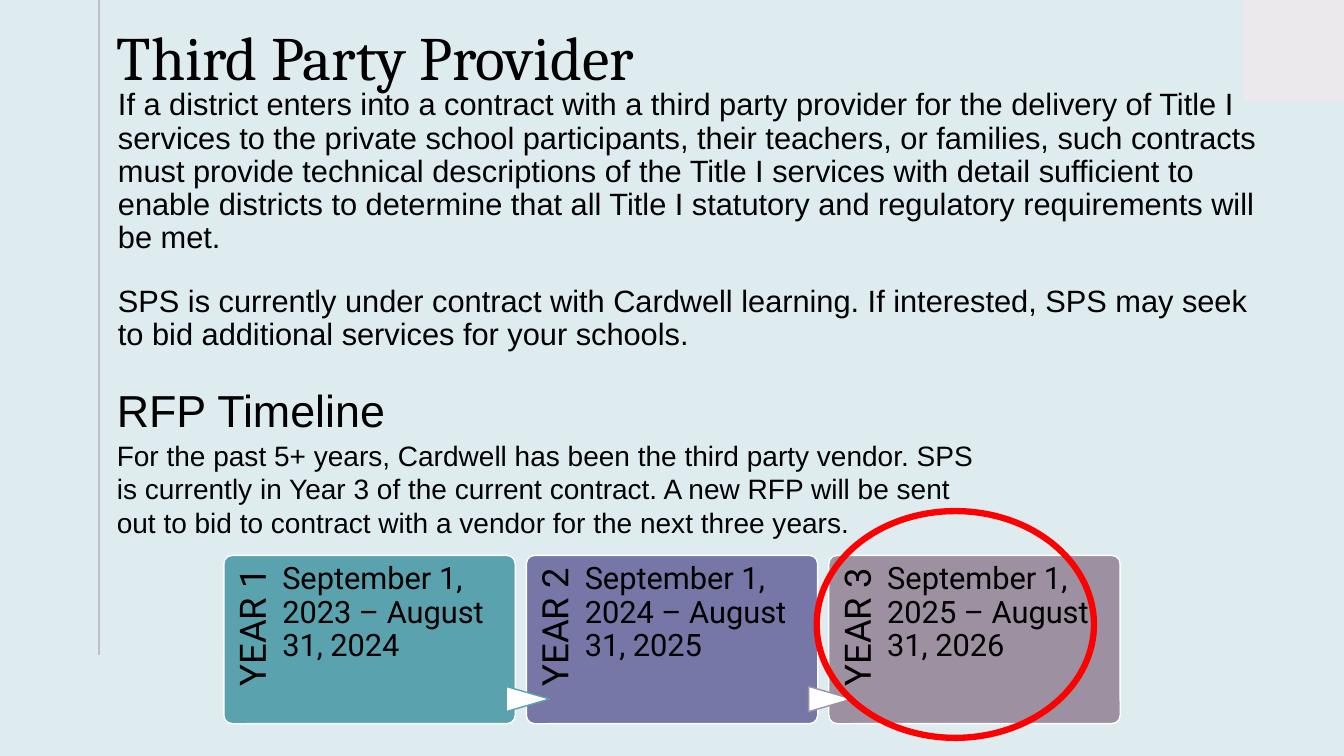
from dataclasses import dataclass

from pptx import Presentation
from pptx import util as u
from pptx.dml.color import RGBColor
from pptx.enum import shapes, text
from pptx.oxml.ns import qn
from lxml import etree

PX = 9144  # EMU in one px, 100 px to the inch
COLORS = {
    "paper": "DEECEF", "corner": "EBE9EC", "rule": "C4BCC6", "ink": "000000",
    "white": "FFFFFF", "teal": "5AA2AE", "violet": "7677A6", "mauve": "9D90A0",
    "red": "FF0000",
}
SHAPE = shapes.MSO_SHAPE
INSET = (10, 5, 10, 5)
FLUSH = (0, 5, 10, 5)
YEAR_PITCH = 300


@dataclass(frozen=True)
class Box:
    left: int
    top: int
    width: int
    height: int

    def emu(self) -> list[int]:
        return [n * PX for n in (self.left, self.top, self.width, self.height)]

    def moved(self, steps: int) -> "Box":
        return Box(self.left + steps * YEAR_PITCH, self.top, self.width, self.height)


@dataclass(frozen=True)
class Year:
    label: str
    dates: str
    fill: str
    arrow_line: str | None = None


CARD = Box(222, 551, 289, 167)
LABEL = Box(183, 590, 137, 58)
DATES = Box(280, 551, 216, 167)
ARROW = Box(211, 672, 25, 43)
YEARS = [
    Year("YEAR 1", "September 1, 2023 – August 31, 2024", "teal"),
    Year("YEAR 2", "September 1, 2024 – August 31, 2025", "violet", "teal"),
    Year("YEAR 3", "September 1, 2025 – August 31, 2026", "mauve", "mauve"),
]


def color(name: str) -> RGBColor:
    return RGBColor.from_string(COLORS[name])


def write(para, words: str, *, size: int, font: str = "Arial", spacing: float = 0.9,
          before: int = 0, align=text.PP_ALIGN.LEFT) -> None:
    para.alignment = align
    para.line_spacing = spacing
    para.space_before = u.Pt(before)
    span = para.add_run()
    span.text = words
    span.font.size = u.Pt(size)
    span.font.name = font
    span.font.color.rgb = color("ink")


def set_frame(frame, insets: tuple[int, ...] = INSET, anchor=text.MSO_ANCHOR.TOP) -> None:
    frame.word_wrap = True
    frame.auto_size = text.MSO_AUTO_SIZE.NONE
    frame.vertical_anchor = anchor
    (frame.margin_left, frame.margin_top,
     frame.margin_right, frame.margin_bottom) = [n * PX for n in insets]


def add_text(page, box: Box, words: str, *, insets: tuple[int, ...] = INSET,
             anchor=text.MSO_ANCHOR.TOP, rotation: int = 0, **style):
    text_box = page.shapes.add_textbox(*box.emu())
    text_box.rotation = rotation
    set_frame(text_box.text_frame, insets, anchor)
    write(text_box.text_frame.paragraphs[0], words, **style)
    return text_box


def add_shape(page, kind, box: Box, *, fill: str | None = None,
              line: str | None = None, weight: float = 1, rotation: int = 0):
    shape = page.shapes.add_shape(kind, *box.emu())
    shape.shadow.inherit = False
    shape.rotation = rotation
    if fill:
        shape.fill.solid()
        shape.fill.fore_color.rgb = color(fill)
    else:
        shape.fill.background()
    if line:
        shape.line.color.rgb = color(line)
        shape.line.width = u.Pt(weight)
    else:
        shape.line.fill.background()
    return shape


def add_rule(page, x: int, bottom: int) -> None:
    rule = page.shapes.add_connector(shapes.MSO_CONNECTOR.STRAIGHT, x * PX, 0, x * PX, bottom * PX)
    rule.line.color.rgb = color("rule")
    rule.line.width = u.Pt(1.5)
    etree.SubElement(rule._element.spPr, qn("a:effectLst"))


def add_year(page, index: int, year: Year) -> None:
    card = add_shape(page, SHAPE.ROUNDED_RECTANGLE, CARD.moved(index),
                     fill=year.fill, line="white")
    card.adjustments[0] = 0.05
    add_text(page, LABEL.moved(index), year.label, insets=(0, 10, 13, 0), rotation=270,
             size=26, font="Roboto", align=text.PP_ALIGN.RIGHT)
    if year.arrow_line:
        add_shape(page, SHAPE.FLOWCHART_EXTRACT, ARROW.moved(index),
                  fill="white", line=year.arrow_line, rotation=90)
    add_text(page, DATES.moved(index), year.dates, insets=(0, 8, 0, 0), size=22, font="Roboto")


def main() -> None:
    deck = Presentation()
    deck.slide_width, deck.slide_height = 1333 * PX, 750 * PX
    page = deck.slides.add_slide(deck.slide_layouts[5])

    # Background and decoration
    page.background.fill.solid()
    page.background.fill.fore_color.rgb = color("paper")
    add_shape(page, SHAPE.RECTANGLE, Box(1233, 0, 100, 100), fill="corner")
    add_rule(page, 98, 650)

    # Heading and provider rules
    add_text(page, Box(106, 22, 766, 75), "Third Party Provider",
             size=44, font="Cambria", before=10)
    title = page.shapes.title
    title.left, title.top, title.width, title.height = Box(117, 0, 1140, 342).emu()
    set_frame(title.text_frame, FLUSH, text.MSO_ANCHOR.MIDDLE)
    write(title.text_frame.paragraphs[0],
          "If a district enters into a contract with a third party provider for the delivery "
          "of Title I services to the private school participants, their teachers, or families, "
          "such contracts must provide technical descriptions of the Title I services with "
          "detail sufficient to enable districts to determine that all Title I statutory and "
          "regulatory requirements will be met.", size=22)
    add_text(page, Box(117, 252, 1140, 129),
             "SPS is currently under contract with Cardwell learning. If interested, SPS may "
             "seek to bid additional services for your schools.",
             insets=FLUSH, anchor=text.MSO_ANCHOR.MIDDLE, size=22)

    # Timeline introduction
    intro = add_text(page, Box(106, 375, 889, 207), "RFP Timeline", size=32, spacing=1.0)
    write(intro.text_frame.add_paragraph(),
          "For the past 5+ years, Cardwell has been the third party vendor. SPS is currently in "
          "Year 3 of the current contract. A new RFP will be sent out to bid to contract with a "
          "vendor for the next three years.", size=20, spacing=1.0, before=1)

    # Contract years, with the current one circled
    for index, year in enumerate(YEARS):
        add_year(page, index, year)
    add_shape(page, SHAPE.OVAL, Box(810, 507, 275, 225), line="red", weight=4.5)

    deck.save("out.pptx")


if __name__ == "__main__":
    main()
